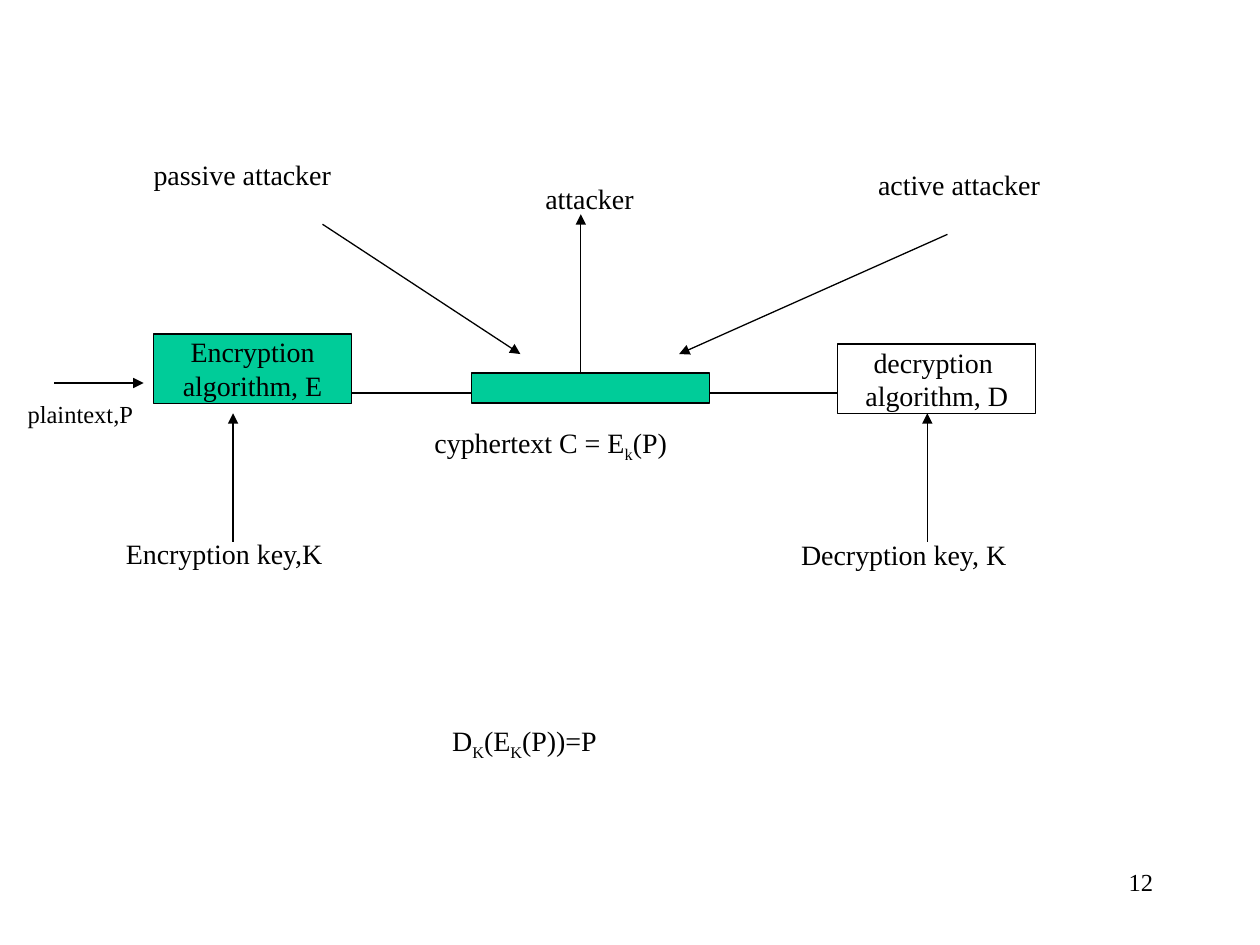
"""Builds the slide on encryption, decryption and the attackers between them."""
from lxml.etree import SubElement
from pptx import Presentation
from pptx.dml.color import RGBColor
from pptx.enum.shapes import MSO_CONNECTOR, MSO_SHAPE
from pptx.enum.text import MSO_ANCHOR, PP_ALIGN
from pptx.oxml.ns import qn
from pptx.util import Inches, Pt

COLORS = {"ink": "000000", "green": "00CC99", "white": "FFFFFF"}
COLUMNS, ROWS = 100, 75


class Diagram:
    """Holds the style and the current page, placing elements on a grid."""

    font_name = "Times New Roman"
    line_width = Pt(0.75)

    def __init__(self, deck):
        """Add a blank page to the deck."""
        self.deck = deck
        self.page = deck.slides.add_slide(deck.slide_layouts[6])

    def place(self, *lengths):
        """Turn alternating columns and rows into slide lengths."""
        units = (self.deck.slide_width / COLUMNS, self.deck.slide_height / ROWS)
        return [round(length * units[i % 2]) for i, length in enumerate(lengths)]

    def color(self, name):
        """Look up a colour by name."""
        return RGBColor.from_string(COLORS[name])

    def add_spans(self, para, spans, size, align):
        """Add spans to a paragraph, with every second one as a subscript."""
        para.alignment = align
        for i, words in enumerate(spans):
            span = para.add_run()
            span.text = words
            span.font.name = self.font_name
            span.font.size = Pt(size)
            span.font.color.rgb = self.color("ink")
            if i % 2:
                span._r.get_or_add_rPr().set("baseline", "-25000")

    def label(self, at, *spans, size=16, align=PP_ALIGN.LEFT):
        """Add a text box of one paragraph."""
        box = self.page.shapes.add_textbox(*self.place(*at))
        box.text_frame.word_wrap = True
        self.add_spans(box.text_frame.paragraphs[0], spans, size, align)

    def block(self, at, fill, *lines):
        """Add an outlined rectangle with centred lines of text."""
        box = self.page.shapes.add_shape(MSO_SHAPE.RECTANGLE, *self.place(*at))
        box.shadow.inherit = False
        box.fill.solid()
        box.fill.fore_color.rgb = self.color(fill)
        box.line.color.rgb = self.color("ink")
        box.line.width = self.line_width
        frame = box.text_frame
        frame.word_wrap = False
        frame.vertical_anchor = MSO_ANCHOR.MIDDLE
        for i, words in enumerate(lines):
            para = frame.add_paragraph() if i else frame.paragraphs[0]
            self.add_spans(para, [words], 16, PP_ALIGN.CENTER)

    def line(self, start, end, arrow=True):
        """Add a straight line, with an arrowhead at its end if wanted."""
        link = self.page.shapes.add_connector(
            MSO_CONNECTOR.STRAIGHT, *self.place(*start, *end))
        link.line.color.rgb = self.color("ink")
        link.line.width = self.line_width
        properties = link._element.spPr
        if arrow:
            SubElement(properties.find(qn("a:ln")), qn("a:tailEnd"), type="triangle")
        SubElement(properties, qn("a:effectLst"))


def main():
    """Build and save the deck."""
    deck = Presentation()
    deck.slide_width, deck.slide_height = Inches(10), Inches(7.5)
    diagram = Diagram(deck)

    for left, right in ((27.2, 37.4), (56.3, 66.5)):
        diagram.line((left, 31.2), (right, 31.2), arrow=False)
    diagram.block((12.2, 26.5, 15.7, 5.5), "green", "Encryption", "algorithm, E")
    diagram.block((37.4, 29.6, 18.9, 2.4), "green")
    diagram.block((66.5, 27.3, 15.7, 5.5), "white", "decryption ", "algorithm, D")

    diagram.line((4.3, 30.4), (11.4, 30.4))
    diagram.line((46.1, 29.6), (46.1, 17))
    diagram.line((25.6, 17.8), (41.3, 28.1))
    diagram.line((75.2, 18.6), (53.9, 28.1))
    for column in (18.5, 73.6):
        diagram.line((column, 43), (column, 32.8))

    diagram.label((11.2, 12, 23.1, 3.7), "passive attacker")
    diagram.label((42.3, 13.9, 10.1, 3.7), "attacker")
    diagram.label((68.7, 12.8, 21.5, 3.7), "active attacker")
    diagram.label((1.2, 31.2, 11.8, 3.3), "plaintext,P", size=14)
    diagram.label((33.5, 33.3, 28.4, 3.7), "cyphertext C = E", "k", "(P)")
    diagram.label((9, 42.1, 18.9, 3.7), "Encryption key,K")
    diagram.label((62.6, 42.2, 23.6, 3.7), "Decryption key, K")
    diagram.label((34.9, 56.9, 56.8, 3.7), "D", "K", "(E", "K", "(P))=P")
    diagram.label((71.7, 68.3, 20.8, 5), "12", size=14, align=PP_ALIGN.RIGHT)

    deck.save("out.pptx")


if __name__ == "__main__":
    main()
